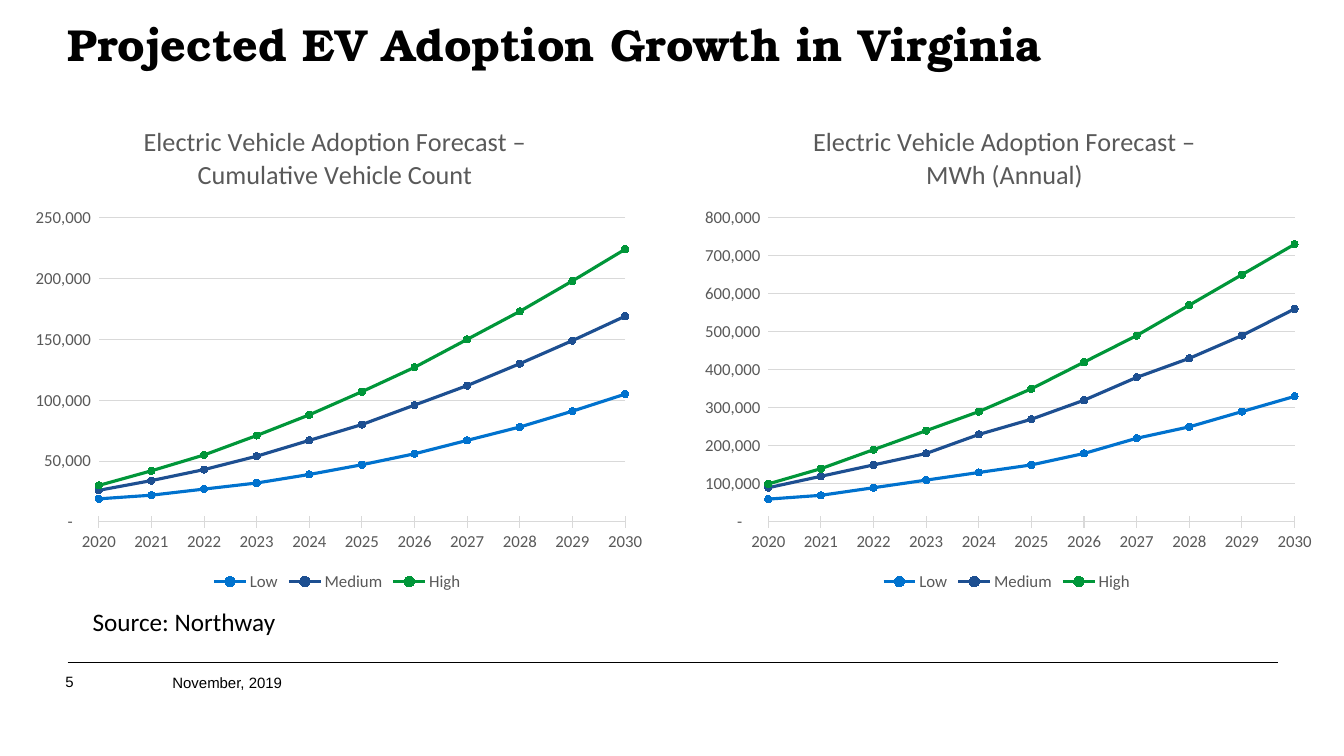
"""Build the slide on projected EV growth in Virginia."""
from dataclasses import dataclass

from pptx import Presentation
from pptx.chart.data import CategoryChartData
from pptx.dml.color import RGBColor
from pptx.enum.chart import XL_CHART_TYPE, XL_LEGEND_POSITION, XL_MARKER_STYLE, XL_TICK_MARK
from pptx.enum.shapes import MSO_CONNECTOR
from pptx.oxml.ns import qn
from pptx.oxml.xmlchemy import OxmlElement
from pptx.util import Inches, Pt

BLACK = RGBColor(0x00, 0x00, 0x00)
GRAY = RGBColor(0x59, 0x59, 0x59)
PALE = RGBColor(0xD9, 0xD9, 0xD9)
BLUE = RGBColor(0x00, 0x72, 0xCE)
NAVY = RGBColor(0x1D, 0x4F, 0x91)
GREEN = RGBColor(0x00, 0x96, 0x39)

CASES = {"Low": BLUE, "Medium": NAVY, "High": GREEN}
YEARS = [str(year) for year in range(2020, 2031)]
FORMAT = '_(* #,##0_);_(* \\(#,##0\\);_(* "-"??_);_('
TOP, WIDTH, HEIGHT = 1.06, 6.29, 4.85


@dataclass
class Graph:
    left: float
    title: tuple[str, str]
    high: int
    step: int
    scale: int
    rows: tuple[list[int], ...]


GRAPHS = (
    Graph(0.2, ("Electric Vehicle Adoption Forecast –", "Cumulative Vehicle Count"),
          250000, 50000, 1000, (
              [19, 22, 27, 32, 39, 47, 56, 67, 78, 91, 105],
              [26, 34, 43, 54, 67, 80, 96, 112, 130, 149, 169],
              [30, 42, 55, 71, 88, 107, 127, 150, 173, 198, 224])),
    Graph(6.84, ("Electric Vehicle Adoption Forecast –", "MWh (Annual)"),
          800000, 100000, 10000, (
              [6, 7, 9, 11, 13, 15, 18, 22, 25, 29, 33],
              [9, 12, 15, 18, 23, 27, 32, 38, 43, 49, 56],
              [10, 14, 19, 24, 29, 35, 42, 49, 57, 65, 73])),
)


def style(font, size: float, color: RGBColor, face: str = "Calibri", bold: bool = False) -> None:
    font.size, font.name, font.bold = Pt(size), face, bold
    font.color.rgb = color


def add_text(slide, text: str, left: float, top: float, width: float, height: float, *,
             size: float, face: str, bold: bool = False,
             inset: tuple[float, float] = (0, 0), space: float | None = None) -> None:
    box = slide.shapes.add_textbox(Inches(left), Inches(top), Inches(width), Inches(height))
    frame = box.text_frame
    frame.word_wrap = True
    frame.margin_left = frame.margin_right = Inches(inset[0])
    frame.margin_top = frame.margin_bottom = Inches(inset[1])
    para = frame.paragraphs[0]
    if space:
        para.line_spacing = Pt(space)
    run = para.add_run()
    run.text = text
    style(run.font, size, BLACK, face, bold)


def add_rule(slide) -> None:
    rule = slide.shapes.add_connector(
        MSO_CONNECTOR.STRAIGHT, Inches(0.67), Inches(6.57), Inches(12.68), Inches(6.57))
    rule.line.color.rgb = BLACK
    rule.line.width = Pt(0.5)
    rule.element.spPr.append(OxmlElement("a:effectLst"))


def place(node, **spots: float) -> None:
    layout = node.find(qn("c:layout"))
    if layout is None:
        layout = OxmlElement("c:layout")
        node.insert(0, layout)
    for child in list(layout):
        layout.remove(child)
    manual = OxmlElement("c:manualLayout")
    layout.append(manual)
    values = {"xMode": "edge", "yMode": "edge"} | spots
    if "w" in spots:
        values = {"layoutTarget": "inner"} | values
    for name, value in values.items():
        item = OxmlElement(f"c:{name}")
        item.set("val", str(value))
        manual.append(item)


def cross_at_mid(axis) -> None:
    node = axis.find(qn("c:crossBetween"))
    if node is None:
        node = OxmlElement("c:crossBetween")
        axis.find(qn("c:crosses")).addnext(node)
    node.set("val", "midCat")


def style_axes(chart, graph: Graph) -> None:
    base, side = chart.category_axis, chart.value_axis
    for axis in (base, side):
        style(axis.tick_labels.font, 12, GRAY)
        axis.minor_tick_mark = XL_TICK_MARK.NONE
    base.major_tick_mark = XL_TICK_MARK.CROSS
    base.has_major_gridlines = False
    side.major_tick_mark = XL_TICK_MARK.NONE
    side.has_major_gridlines = True
    for line in (base.format.line, side.major_gridlines.format.line):
        line.color.rgb = PALE
        line.width = Pt(0.75)
    side.format.line.fill.background()
    side.minimum_scale, side.maximum_scale, side.major_unit = 0, graph.high, graph.step
    side.tick_labels.number_format = FORMAT
    side.tick_labels.number_format_is_linked = False
    cross_at_mid(chart.element.find(".//" + qn("c:valAx")))


def add_graph(slide, graph: Graph) -> None:
    data = CategoryChartData(number_format="#,##0")
    data.categories = YEARS
    for name, row in zip(CASES, graph.rows):
        data.add_series(name, [value * graph.scale for value in row])
    chart = slide.shapes.add_chart(
        XL_CHART_TYPE.LINE_MARKERS, Inches(graph.left), Inches(TOP),
        Inches(WIDTH), Inches(HEIGHT), data).chart
    style(chart.font, 10, BLACK)

    chart.has_title = True
    frame = chart.chart_title.text_frame
    frame.text = "\n".join(graph.title)
    for para in frame.paragraphs:
        style(para.font, 18.7, GRAY)
        for run in para.runs:
            style(run.font, 18.7, GRAY)
    place(chart.element.find(".//" + qn("c:title")), x=0.19, y=0.03)
    place(chart.element.find(".//" + qn("c:plotArea")), x=0.78 / WIDTH, y=1.1 / HEIGHT,
          w=5.22 / WIDTH, h=3.02 / HEIGHT)

    chart.has_legend = True
    chart.legend.position = XL_LEGEND_POSITION.BOTTOM
    chart.legend.include_in_layout = False
    style(chart.legend.font, 12, GRAY)
    style_axes(chart, graph)

    chart.plots[0].vary_by_categories = False
    for series, color in zip(chart.plots[0].series, CASES.values()):
        series.smooth = False
        series.format.line.color.rgb = color
        series.format.line.width = Pt(2.25)
        mark = series.marker
        mark.style, mark.size = XL_MARKER_STYLE.CIRCLE, 5
        mark.format.fill.solid()
        mark.format.fill.fore_color.rgb = color
        mark.format.line.color.rgb = color


def main() -> None:
    deck = Presentation()
    deck.slide_width, deck.slide_height = Inches(13.33), Inches(7.5)
    slide = deck.slides.add_slide(deck.slide_layouts[6])
    add_rule(slide)
    add_text(slide, "5", 0.65, 6.67, 0.34, 0.4, size=10.7, face="Arial")
    add_text(slide, "Projected EV Adoption Growth in Virginia", 0.67, 0.25, 12, 0.81,
             size=32, face="TeX Gyre Bonum", bold=True, space=32)
    add_text(slide, "November, 2019", 1.71, 6.68, 3.11, 0.39, size=10.7, face="Arial")
    add_text(slide, "Source: Northway", 0.82, 5.97, 2.3, 0.4, size=18, face="Calibri",
             inset=(0.1, 0.05))
    for graph in GRAPHS:
        add_graph(slide, graph)
    deck.save("out.pptx")


if __name__ == "__main__":
    main()
